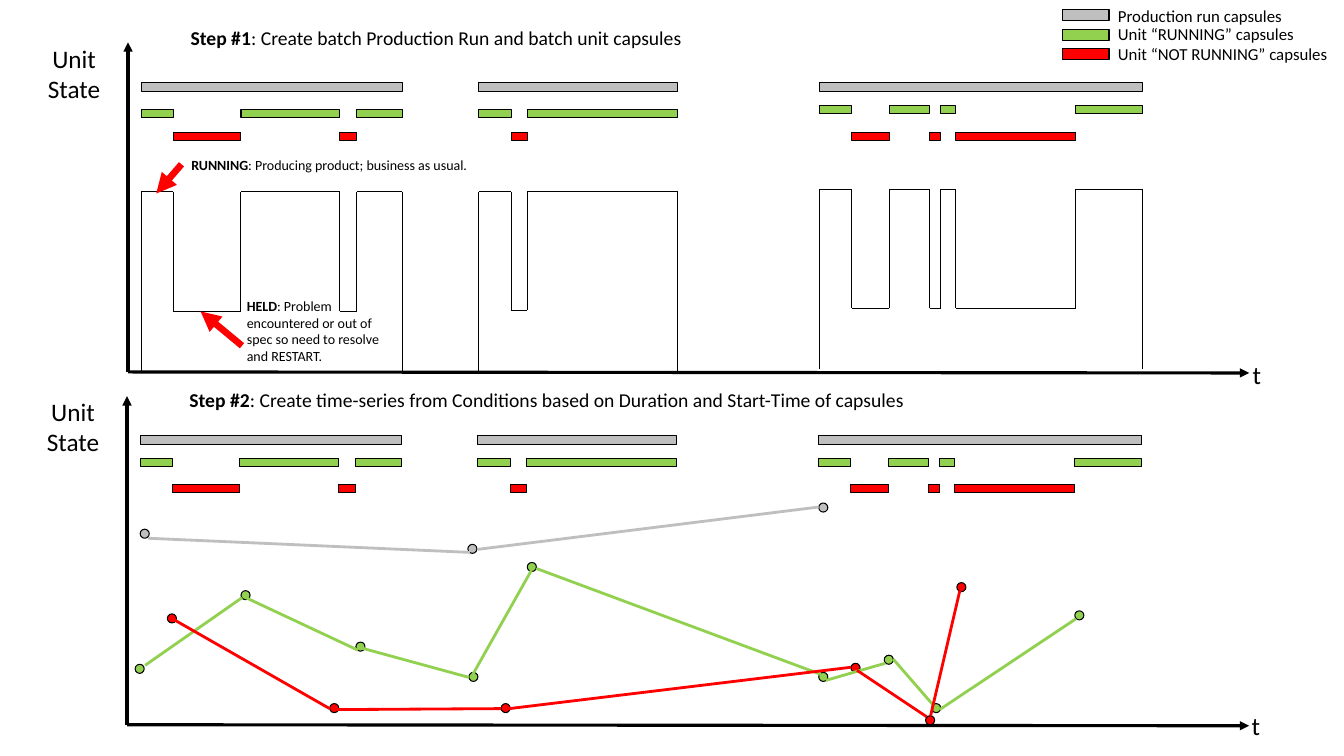
from collections import namedtuple
from itertools import pairwise

from lxml import etree
from pptx import Presentation
from pptx import util as u
from pptx.dml import color
from pptx.enum import shapes, text
from pptx.oxml import ns

Theme = namedtuple("Theme", "font ink production running stopped axis_size step_size legend_size note_size")
theme = Theme("Calibri", "000000", "BFBFBF", "92D050", "FF0000", 18, 14, 12, 10)

prs = Presentation()
prs.slide_width, prs.slide_height = u.Inches(13.33), u.Inches(7.5)
s = prs.slides.add_slide(prs.slide_layouts[5])


def add_mark(kind, left, top, width, height, fill):
    sp = s.shapes.add_shape(kind, *map(u.Inches, (left, top, width, height)))
    sp.shadow.inherit = False
    sp.fill.solid()
    sp.fill.fore_color.rgb = color.RGBColor.from_string(fill)
    sp.line.color.rgb = color.RGBColor.from_string(theme.ink)
    sp.line.width = u.Pt(0.75)


def add_line(start, end, ink, width, arrow=False):
    c = s.shapes.add_connector(shapes.MSO_CONNECTOR.STRAIGHT, *map(u.Inches, (*start, *end)))
    c.line.color.rgb = color.RGBColor.from_string(ink)
    c.line.width = u.Pt(width)
    if arrow:
        etree.SubElement(c.line._get_or_add_ln(), ns.qn("a:tailEnd"), type="triangle")
    etree.SubElement(c._element.spPr, ns.qn("a:effectLst"))


RECT, OVAL = shapes.MSO_SHAPE.RECTANGLE, shapes.MSO_SHAPE.OVAL

axes = [
    ((1.27, 3.69), (1.27, 0.42)),
    ((1.27, 3.69), (12.39, 3.7)),
    ((1.26, 7.19), (1.26, 3.93)),
    ((1.26, 7.19), (12.39, 7.2)),
]
for start, end in axes:
    add_line(start, end, theme.ink, 2.25, arrow=True)

batches = [
    ([1.4, 1.72, 2.39, 3.37, 3.54, 3.99], 1.9, 3.09, 3.69),
    ([4.75, 5.07, 5.23, 6.72], 1.9, 3.08, 3.68),
    ([8.13, 8.45, 8.82, 9.22, 9.33, 9.48, 10.67, 11.33], 1.88, 3.06, 3.66),
]
for changes, high, low, base in batches:
    trace = [(changes[0], base)]
    for i, (begin, finish) in enumerate(pairwise(changes)):
        level = low if i % 2 else high
        trace += [(begin, level), (finish, level)]
    trace.append((changes[-1], base))
    for start, end in pairwise(trace):
        add_line(start, end, theme.ink, 0.75)

capsule_rows = [
    (0, 0.82, [1.09, 1.09, 1.05], 1.31),
    (-0.01, 4.32, [4.55, 4.55, 4.55], 4.81),
]
for shift, production_top, running_tops, stopped_top in capsule_rows:
    for (changes, *_), running_top in zip(batches, running_tops):
        add_mark(RECT, changes[0] + shift, production_top, changes[-1] - changes[0], 0.09, theme.production)
        for i, (begin, finish) in enumerate(pairwise(changes)):
            top, fill = (stopped_top, theme.stopped) if i % 2 else (running_top, theme.running)
            add_mark(RECT, begin + shift, top, finish - begin, 0.08, fill)

legend = [
    (0.09, 0.01, "Production run capsules", theme.production),
    (0.29, 0.19, "Unit “RUNNING” capsules", theme.running),
    (0.48, 0.38, "Unit “NOT RUNNING” capsules", theme.stopped),
]
for top, _, _, fill in legend:
    add_mark(RECT, 10.54, top, 0.46, 0.11, fill)

series = [
    (theme.running,
     [(1.34, 6.59), (2.39, 5.86), (3.53, 6.37), (4.65, 6.67), (5.23, 5.58),
      (8.12, 6.67), (8.77, 6.5), (9.24, 6.98), (10.66, 6.06)],
     [((1.44, 6.6), (2.4, 5.93)), ((2.44, 5.93), (3.55, 6.45)),
      ((3.59, 6.43), (4.65, 6.72)), ((4.69, 6.69), (5.27, 5.66)),
      ((5.32, 5.64), (8.14, 6.69)), ((8.19, 6.75), (8.78, 6.58)),
      ((8.86, 6.54), (9.26, 7)), ((9.32, 7.04), (10.67, 6.14))]),
    (theme.stopped,
     [(1.66, 6.09), (3.27, 6.98), (4.97, 6.98), (8.44, 6.58), (9.18, 7.1), (9.49, 5.78)],
     [((1.73, 6.15), (3.27, 7.03)), ((3.31, 7.04), (4.97, 7.03)),
      ((5.05, 7.03), (8.44, 6.62)), ((8.5, 6.65), (9.19, 7.11)),
      ((9.23, 7.1), (9.52, 5.86))]),
    (theme.production,
     [(1.39, 5.25), (4.64, 5.4), (8.12, 4.99)],
     [((1.47, 5.34), (4.66, 5.48)), ((4.74, 5.45), (8.12, 5.03))]),
]
for ink, dots, _ in series:
    for left, top in dots:
        add_mark(OVAL, left, top, 0.09, 0.09, ink)
for ink, _, segments in series:
    for start, end in segments:
        add_line(start, end, ink, 2)

for start, end in [((1.8, 1.63), (1.55, 1.92)), ((2.4, 3.43), (1.99, 3.09))]:
    add_line(start, end, theme.stopped, 4.75, arrow=True)

title = s.shapes.title
labels = [
    (title, (1.79, 0.21, 7.18, 0.34), theme.step_size, "Step #1",
     ": Create batch Production Run and batch unit capsules"),
    (None, (1.78, 3.8, 10.19, 0.34), theme.step_size, "Step #2",
     ": Create time-series from Conditions based on Duration and Start-Time of capsules"),
    (None, (1.8, 1.5, 7.18, 0.27), theme.note_size, "RUNNING",
     ": Producing product; business as usual."),
    (None, (2.35, 2.9, 1.54, 0.77), theme.note_size, "HELD",
     ": Problem encountered or out of spec so need to resolve and RESTART."),
    (None, (0.37, 0.38, 0.73, 0.71), theme.axis_size, "", "Unit\nState"),
    (None, (0.36, 3.88, 0.73, 0.71), theme.axis_size, "", "Unit\nState"),
    (None, (12.32, 3.52, 0.29, 0.4), theme.axis_size, "", "t"),
    (None, (12.31, 7, 0.29, 0.4), theme.axis_size, "", "t"),
]
labels += [(None, (10.99, top, 2.34, 0.3), theme.legend_size, "", words) for _, top, words, _ in legend]
for holder, place, size, lead, words in labels:
    left, top, width, height = map(u.Inches, place)
    sp = holder or s.shapes.add_textbox(left, top, width, height)
    sp.left, sp.top, sp.width, sp.height = left, top, width, height
    on_axis = size == theme.axis_size
    tf = sp.text_frame
    tf.word_wrap = not on_axis
    tf.auto_size = text.MSO_AUTO_SIZE.SHAPE_TO_FIT_TEXT
    tf.vertical_anchor = text.MSO_ANCHOR.TOP
    for i, words_line in enumerate(words.split("\n")):
        p = tf.add_paragraph() if i else tf.paragraphs[0]
        p.alignment = text.PP_ALIGN.CENTER if on_axis else text.PP_ALIGN.LEFT
        p.font.name, p.font.size = theme.font, u.Pt(size)
        p.font.color.rgb = color.RGBColor.from_string(theme.ink)
        if lead:
            r = p.add_run()
            r.text, r.font.bold = lead, True
        p.add_run().text = words_line

prs.save("out.pptx")
